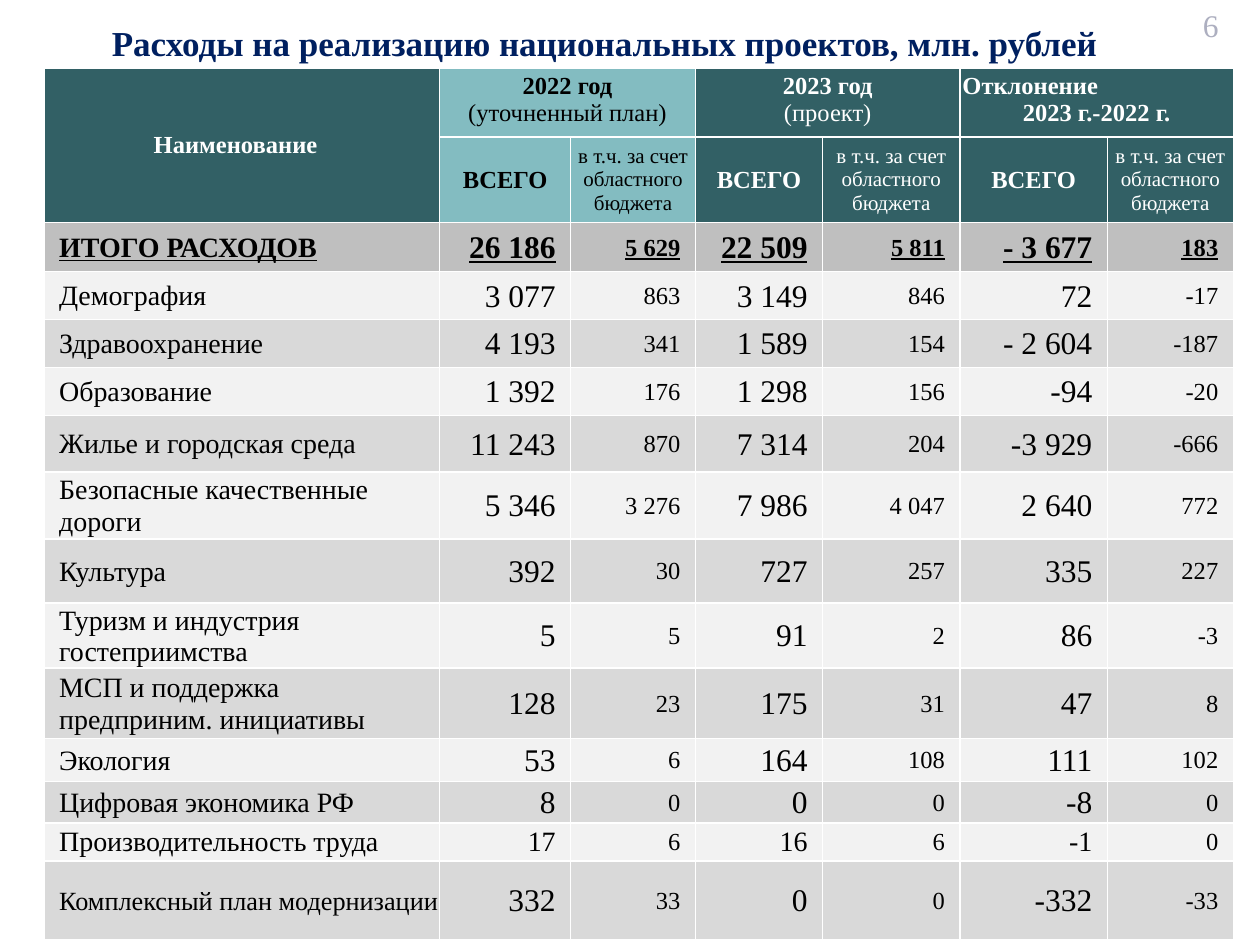
from pptx import Presentation
from pptx.dml.color import RGBColor
from pptx.enum.text import MSO_ANCHOR, PP_ALIGN
from pptx.oxml.ns import qn
from pptx.util import Inches, Pt
from lxml import etree

LEFT, CENTER, RIGHT = PP_ALIGN.LEFT, PP_ALIGN.CENTER, PP_ALIGN.RIGHT
TOP, MIDDLE, BOTTOM = MSO_ANCHOR.TOP, MSO_ANCHOR.MIDDLE, MSO_ANCHOR.BOTTOM

FONT = "Times New Roman"
SLIDE_WIDTH, SLIDE_HEIGHT = 10, 7.5
COLORS = {
    "title": "002060", "number": "ADAFC0", "white": "FFFFFF", "black": "000000",
    "dark": "326065", "light": "83BCC1",
    "total": "BFBFBF", "odd": "F2F2F2", "even": "D9D9D9",
}

# Relative column widths and row heights of the table grid
COLUMNS = [3.14, 1.04, 0.99, 1.01, 1.09, 1.17, 1]
ROWS = [0.54, 0.67, 0.39, 0.38, 0.38, 0.38, 0.45, 0.53,
        0.51, 0.51, 0.56, 0.34, 0.33, 0.3, 0.63]

# Cell margins: left, top, right, bottom
HEADER_MARGINS = (0.02, 0.04, 0.02, 0.04)
NAME_MARGINS = (0.12, 0.01, 0, 0)
VALUE_MARGINS = (0.01, 0.01, 0.12, 0)

# Each group: fill, text colour, lines of (text, bold, alignment)
GROUPS = [
    ("light", "black", [("2022 год", True, CENTER), ("(уточненный план)", False, CENTER)]),
    ("dark", "white", [("2023 год", True, CENTER), ("(проект)", False, CENTER)]),
    ("dark", "white", [("Отклонение", True, LEFT), ("2023 г.-2022 г.", True, CENTER)]),
]

# Each project: name, six values, format that differs from the usual
PROJECTS = [
    ("ИТОГО РАСХОДОВ", "26 186|5 629|22 509|5 811|- 3 677|183", {}),
    ("Демография", "3 077|863|3 149|846|72|-17", {}),
    ("Здравоохранение", "4 193|341|1 589|154|- 2 604|-187", {}),
    ("Образование", "1 392|176|1 298|156|-94|-20", {}),
    ("Жилье и городская среда", "11 243|870|7 314|204|-3 929|-666", {}),
    ("Безопасные качественные\nдороги", "5 346|3 276|7 986|4 047|2 640|772", {"spacing": 18}),
    ("Культура", "392|30|727|257|335|227", {}),
    ("Туризм и индустрия гостеприимства", "5|5|91|2|86|-3", {"spacing": 18.2}),
    ("МСП и поддержка предприним. инициативы", "128|23|175|31|47|8", {"spacing": 18.2}),
    ("Экология", "53|6|164|108|111|102", {}),
    ("Цифровая экономика РФ", "8|0|0|0|-8|0", {}),
    ("Производительность труда", "17|6|16|6|-1|0", {"spacing": 17, "value_size": 16}),
    ("Комплексный план модернизации", "332|33|0|0|-332|-33", {"spacing": 17, "name_size": 15}),
]


def write(paragraph, text, size=14, color="black", bold=False, underline=False,
          align=LEFT, spacing=None):
    """Put one formatted run into a paragraph."""
    paragraph.alignment = align
    if spacing:
        paragraph.line_spacing = Pt(spacing)
    run = paragraph.add_run()
    run.text = text
    font = run.font
    font.name, font.size = FONT, Pt(size)
    font.bold, font.underline = bold, underline
    font.color.rgb = RGBColor.from_string(COLORS[color])


def next_paragraph(frame, index):
    return frame.paragraphs[0] if index == 0 else frame.add_paragraph()


def add_label(slide, box, text, anchor=TOP, **text_format):
    """Add a text box; box holds shares of the slide's size."""
    left, top, width, height = box
    shape = slide.shapes.add_textbox(
        Inches(left * SLIDE_WIDTH), Inches(top * SLIDE_HEIGHT),
        Inches(width * SLIDE_WIDTH), Inches(height * SLIDE_HEIGHT))
    frame = shape.text_frame
    frame.word_wrap = True
    frame.vertical_anchor = anchor
    write(frame.paragraphs[0], text, **text_format)


def style_cell(cell, fill, margins, anchor=MIDDLE):
    """Set fill, margins, anchor and thin white borders."""
    properties = cell._tc.get_or_add_tcPr()
    for side in ("a:lnL", "a:lnR", "a:lnT", "a:lnB"):
        line = etree.SubElement(properties, qn(side), w=str(Pt(1)))
        solid = etree.SubElement(line, qn("a:solidFill"))
        etree.SubElement(solid, qn("a:srgbClr"), val=COLORS["white"])
    cell.fill.solid()
    cell.fill.fore_color.rgb = RGBColor.from_string(COLORS[fill])
    (cell.margin_left, cell.margin_top,
     cell.margin_right, cell.margin_bottom) = map(Inches, margins)
    cell.vertical_anchor = anchor


def fill_cell(cell, text, fill, margins, **text_format):
    style_cell(cell, fill, margins)
    for index, line in enumerate(text.split("\n")):
        write(next_paragraph(cell.text_frame, index), line, **text_format)


def add_header(table):
    """Two header rows: merged groups above, their parts below."""
    table.cell(0, 0).merge(table.cell(1, 0))
    style_cell(table.cell(1, 0), "dark", HEADER_MARGINS)
    fill_cell(table.cell(0, 0), "Наименование", "dark", (0.1, 0.05, 0.2, 0.05),
              color="white", bold=True, align=CENTER)
    for group, (fill, color, lines) in enumerate(GROUPS):
        first = 1 + 2 * group
        heading = table.cell(0, first)
        heading.merge(table.cell(0, first + 1))
        for column in (first, first + 1):
            style_cell(table.cell(0, column), fill, HEADER_MARGINS, TOP)
        for index, (text, bold, align) in enumerate(lines):
            write(next_paragraph(heading.text_frame, index), text,
                  color=color, bold=bold, align=align)
        fill_cell(table.cell(1, first), "ВСЕГО", fill, HEADER_MARGINS,
                  color=color, bold=True, align=CENTER)
        fill_cell(table.cell(1, first + 1), "в т.ч. за счет областного бюджета",
                  fill, HEADER_MARGINS, size=12, color=color, align=CENTER)


def add_projects(table):
    """Total row, then banded project rows; odd value columns are larger."""
    for index, (name, values, special) in enumerate(PROJECTS):
        row, total = index + 2, index == 0
        fill = "total" if total else ("even", "odd")[index % 2]
        emphasis = {"bold": total, "underline": total}
        fill_cell(table.cell(row, 0), name, fill, NAME_MARGINS,
                  size=special.get("name_size", 16),
                  spacing=special.get("spacing"), **emphasis)
        for column, value in enumerate(values.split("|"), start=1):
            size = special.get("value_size", 18) if column % 2 else 14
            fill_cell(table.cell(row, column), value, fill, VALUE_MARGINS,
                      size=size, align=RIGHT, **emphasis)


def add_expense_table(slide, box):
    left, top, width, height = box
    width, height = width * SLIDE_WIDTH, height * SLIDE_HEIGHT
    table = slide.shapes.add_table(
        len(ROWS), len(COLUMNS), Inches(left * SLIDE_WIDTH),
        Inches(top * SLIDE_HEIGHT), Inches(width), Inches(height)).table
    table.first_row = table.horz_banding = False
    for column, weight in zip(table.columns, COLUMNS):
        column.width = Inches(width * weight / sum(COLUMNS))
    for row, weight in zip(table.rows, ROWS):
        row.height = Inches(height * weight / sum(ROWS))
    add_header(table)
    add_projects(table)


def main():
    presentation = Presentation()
    presentation.slide_width = Inches(SLIDE_WIDTH)
    presentation.slide_height = Inches(SLIDE_HEIGHT)
    slide = presentation.slides.add_slide(presentation.slide_layouts[6])
    # Title
    add_label(slide, (-0.02, 0.016, 1, 0.06),
              "Расходы на реализацию национальных проектов, млн. рублей",
              size=20, color="title", bold=True, align=CENTER)
    # Expenses by project
    add_expense_table(slide, (0.035, 0.072, 0.944, 0.92))
    # Slide number
    add_label(slide, (0.894, 0, 0.083, 0.053), "6", anchor=BOTTOM,
              size=18, color="number", align=RIGHT)
    presentation.save("out.pptx")


if __name__ == "__main__":
    main()
